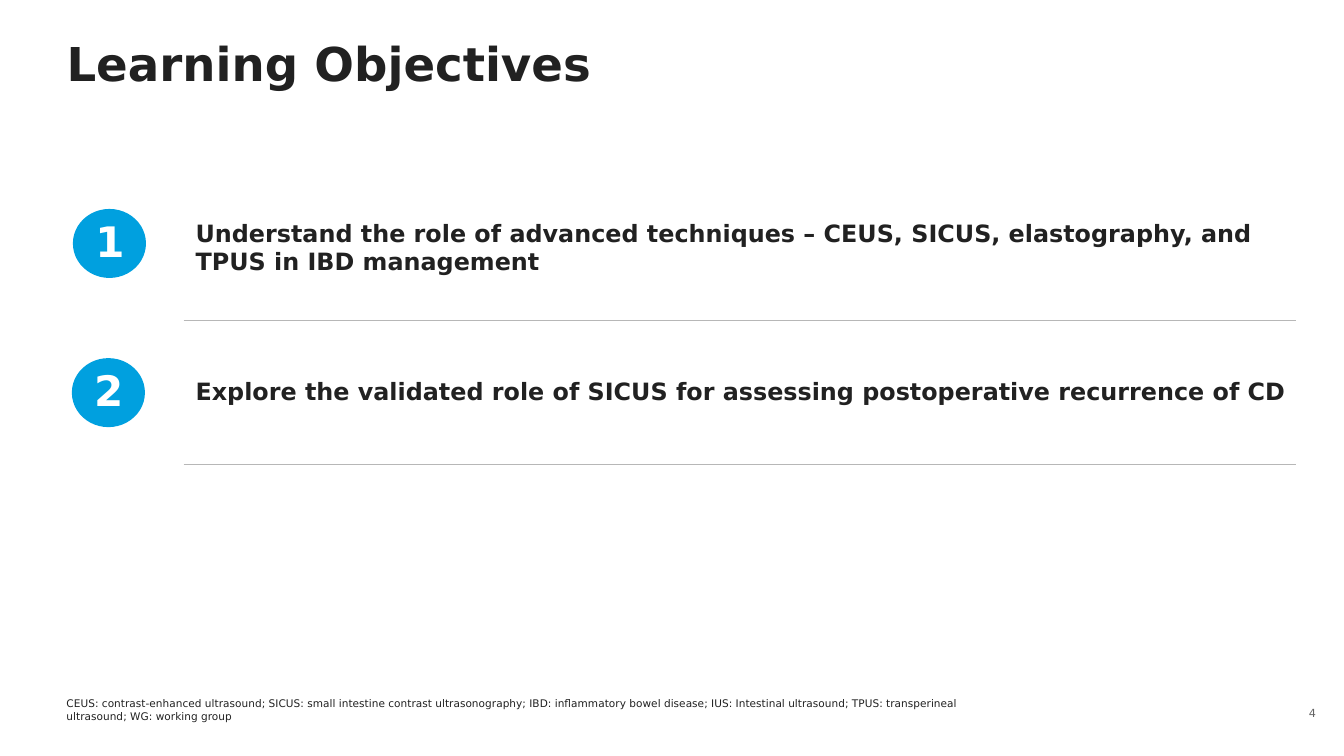
import pptx
import pptx.dml.color
import pptx.enum.shapes
import pptx.enum.text
import pptx.oxml
import pptx.oxml.ns
import pptx.util
from pptx.util import Inches

FONT = "DejaVu Sans"
COLORS = {
    "text": "212121",
    "badge": "00A0DF",
    "number": "FFFFFF",
    "rule": "B7B7B7",
    "page": "646464",
}
OBJECTIVES = [
    "Understand the role of advanced techniques – CEUS, SICUS, elastography, and TPUS in IBD management",
    "Explore the validated role of SICUS for assessing postoperative recurrence of CD",
]
ABBREVIATIONS = (
    "CEUS: contrast-enhanced ultrasound; SICUS: small intestine contrast ultrasonography; "
    "IBD: inflammatory bowel disease; IUS: Intestinal ultrasound; "
    "TPUS: transperineal ultrasound; WG: working group"
)
ALIGN = pptx.enum.text.PP_ALIGN
ANCHOR = pptx.enum.text.MSO_ANCHOR


def rgb(name):
    return pptx.dml.color.RGBColor.from_string(COLORS[name])


def write(frame, text, size, color, bold=False, align=ALIGN.LEFT):
    paragraph = frame.paragraphs[0]
    paragraph.text = text
    paragraph.alignment = align
    paragraph.font.name = FONT
    paragraph.font.size = pptx.util.Pt(size)
    paragraph.font.bold = bold
    paragraph.font.color.rgb = rgb(color)
    return paragraph


def set_insets(frame, horizontal, vertical):
    frame.margin_left = frame.margin_right = Inches(horizontal)
    frame.margin_top = frame.margin_bottom = Inches(vertical)


def add_title(slide, text):
    title = slide.shapes.title
    title.left, title.top = Inches(0.66), Inches(0.41)
    title.width, title.height = Inches(11.1), Inches(0.5)
    frame = title.text_frame
    frame.auto_size = pptx.enum.text.MSO_AUTO_SIZE.NONE
    frame.vertical_anchor = ANCHOR.TOP
    set_insets(frame, 0, 0)
    write(frame, text, 33.3, "text", bold=True).line_spacing = 0.9


def add_text(shapes, box, text, size, color, anchor=ANCHOR.TOP, insets=(0.1, 0.05), **style):
    shape = shapes.add_textbox(*map(Inches, box))
    frame = shape.text_frame
    frame.word_wrap = True
    frame.vertical_anchor = anchor
    set_insets(frame, *insets)
    write(frame, text, size, color, **style)


def set_borders(cell, ruled_sides):
    properties = cell._tc.get_or_add_tcPr()
    namespace = pptx.oxml.ns.nsdecls("a")
    for index, side in enumerate(("lnL", "lnR", "lnT", "lnB")):
        if side in ruled_sides:
            fill = f'<a:solidFill><a:srgbClr val="{COLORS["rule"]}"/></a:solidFill>'
        else:
            fill = "<a:noFill/>"
        border = pptx.oxml.parse_xml(f'<a:{side} {namespace} w="12700">{fill}</a:{side}>')
        properties.insert(index, border)


def add_objectives(slide):
    frame = slide.shapes.add_table(
        len(OBJECTIVES), 1, Inches(1.82), Inches(1.75), Inches(11.03), Inches(2.86)
    )
    table = frame.table
    table.first_row = table.horz_banding = False
    for index, objective in enumerate(OBJECTIVES):
        cell = table.cell(index, 0)
        cell.fill.background()
        cell.vertical_anchor = ANCHOR.MIDDLE
        cell.margin_left, cell.margin_right = Inches(0.12), Inches(0.06)
        cell.margin_top = cell.margin_bottom = Inches(0.04)
        write(cell.text_frame, objective, 17, "text", bold=True)
        set_borders(cell, ("lnB",) if index == 0 else ("lnT", "lnB"))


def add_badge(slide, number, left, top):
    group = slide.shapes.add_group_shape()
    circle = group.shapes.add_shape(
        pptx.enum.shapes.MSO_SHAPE.OVAL,
        Inches(left), Inches(top), Inches(0.69), Inches(0.65),
    )
    circle.shadow.inherit = False
    circle.fill.solid()
    circle.fill.fore_color.rgb = rgb("badge")
    circle.line.color.rgb = rgb("badge")
    circle.line.width = pptx.util.Pt(2.5)
    add_text(group.shapes, (left - 0.52, top, 1.74, 0.61), str(number), 30, "number",
             bold=True, align=ALIGN.CENTER)


def main():
    presentation = pptx.Presentation()
    presentation.slide_width = Inches(13.33)
    presentation.slide_height = Inches(7.5)
    slide = presentation.slides.add_slide(presentation.slide_layouts[5])
    add_title(slide, "Learning Objectives")
    add_objectives(slide)
    add_badge(slide, 1, 0.74, 2.09)
    add_badge(slide, 2, 0.73, 3.57)
    add_text(slide.shapes, (12.73, 6.89, 0.42, 0.36), "4", 8, "page",
             anchor=ANCHOR.MIDDLE, align=ALIGN.RIGHT)
    add_text(slide.shapes, (0.66, 6.87, 9.17, 0.3), ABBREVIATIONS, 7.5, "text",
             anchor=ANCHOR.BOTTOM, insets=(0, 0))
    presentation.save("out.pptx")


if __name__ == "__main__":
    main()
